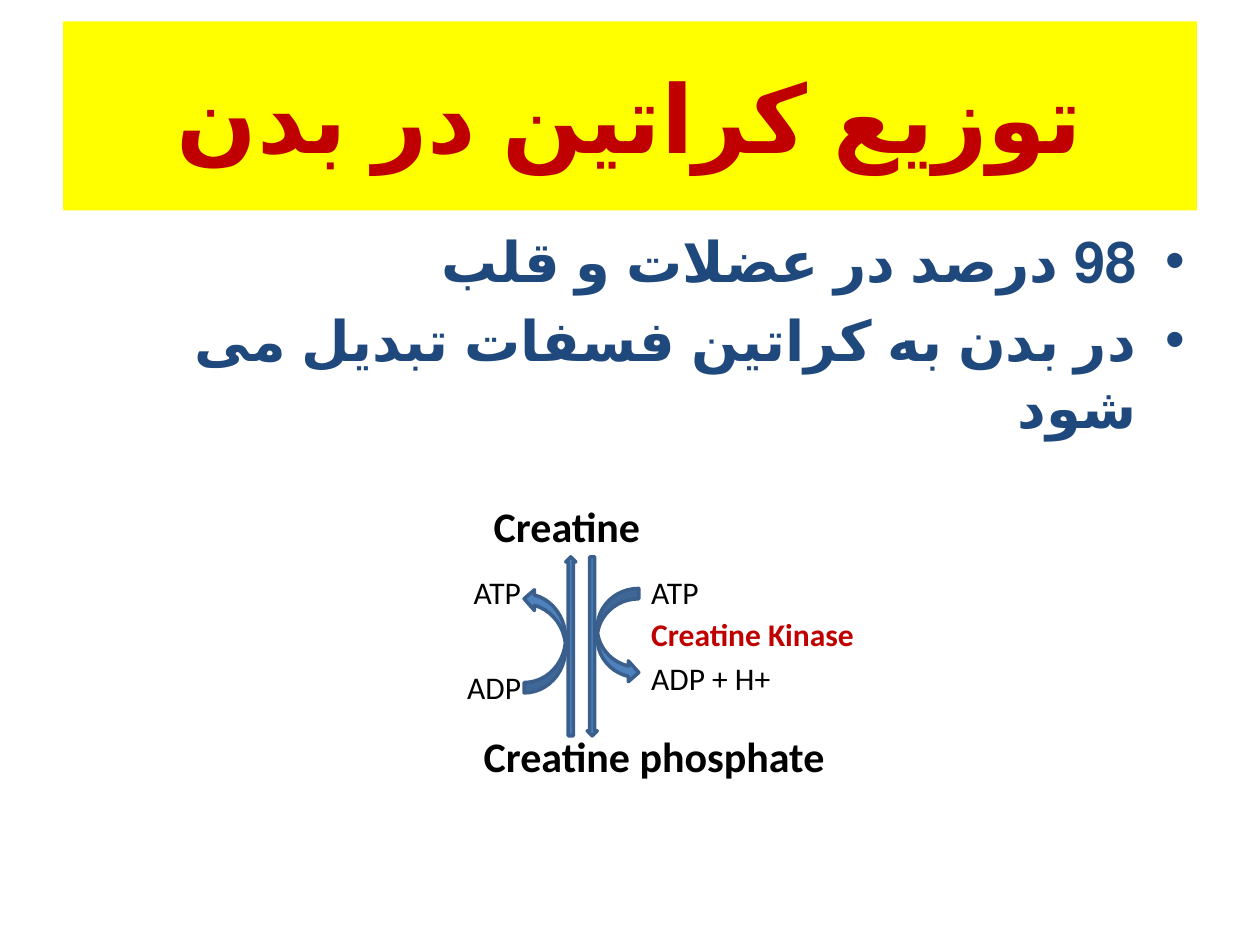
from lxml import etree
from pptx import Presentation
from pptx.dml.color import RGBColor
from pptx.enum.lang import MSO_LANGUAGE_ID as LANG
from pptx.enum.shapes import MSO_SHAPE as SHAPE
from pptx.enum.text import MSO_ANCHOR as ANCHOR, MSO_AUTO_SIZE as AUTO, PP_ALIGN as ALIGN
from pptx.oxml.ns import qn
from pptx.util import Inches, Pt

RED, YELLOW, NAVY, BLACK = "C00000", "FFFF00", "1F497D", "000000"
BLUE, EDGE = "4F81BD", "3A5F8C"


def rgb(value):
    return RGBColor.from_string(value)


def place(sp, box):
    sp.left, sp.top, sp.width, sp.height = (Inches(v) for v in box)


class SlideBuilder:
    font = "Calibri"

    def __init__(self, prs):
        self.s = prs.slides.add_slide(prs.slide_layouts[5])
        self.group = self.s.shapes.add_group_shape()

    def run(self, p, text, size, color, bold=False, farsi=False):
        r = p.add_run()
        r.text = text
        f = r.font
        f.name, f.size, f.bold = self.font, Pt(size), bold
        f.color.rgb = rgb(color)
        if farsi:
            f.language_id = LANG.FARSI

    def title(self, text, box):
        sp = self.s.shapes.title
        place(sp, box)
        sp.fill.solid()
        sp.fill.fore_color.rgb = rgb(YELLOW)
        tf = sp.text_frame
        tf.vertical_anchor = ANCHOR.MIDDLE
        p = tf.paragraphs[0]
        p.alignment = ALIGN.CENTER
        p._p.get_or_add_pPr().set("rtl", "1")
        self.run(p, text, 54, RED, True, True)

    def bullets(self, lines, box):
        tf = self.s.shapes.add_textbox(*(Inches(v) for v in box)).text_frame
        tf.word_wrap = True
        for i, line in enumerate(lines):
            p = tf.add_paragraph() if i else tf.paragraphs[0]
            p.alignment = ALIGN.RIGHT
            p.space_before = Pt(6.4)
            # Right-to-left hanging bullet
            pPr = p._p.get_or_add_pPr()
            pPr.set("rtl", "1")
            pPr.set("marL", str(Inches(0.38)))
            pPr.set("indent", str(Inches(-0.38)))
            etree.SubElement(pPr, qn("a:buFont")).set("typeface", "Arial")
            etree.SubElement(pPr, qn("a:buChar")).set("char", "•")
            self.run(p, line, 32, NAVY, True, True)

    def label(self, text, box, size=18, color=BLACK, bold=False):
        tf = self.group.shapes.add_textbox(*(Inches(v) for v in box)).text_frame
        tf.word_wrap = False
        tf.auto_size = AUTO.SHAPE_TO_FIT_TEXT
        self.run(tf.paragraphs[0], text, size, color, bold)

    def arrow(self, kind, box, flips=()):
        sp = self.group.shapes.add_shape(kind, *(Inches(v) for v in box))
        sp.shadow.inherit = False
        sp.fill.solid()
        sp.fill.fore_color.rgb = rgb(BLUE)
        sp.line.color.rgb = rgb(EDGE)
        sp.line.width = Pt(2)
        for flip in flips:
            sp._element.spPr.find(qn("a:xfrm")).set(flip, "1")


def main():
    prs = Presentation()
    prs.slide_width, prs.slide_height = Inches(10), Inches(7.5)
    b = SlideBuilder(prs)

    # Title and bullets
    b.title("توزیع کراتین در بدن", (0.5, 0.17, 9, 1.5))
    b.bullets(["98 درصد در عضلات و قلب",
               "در بدن به کراتین فسفات تبدیل می شود"], (0.5, 1.75, 9, 4.95))

    # Substrate and product
    b.label("Creatine", (3.82, 3.92, 1.45, 0.5), 24, bold=True)
    b.label("Creatine phosphate", (3.74, 5.75, 3.01, 0.5), 24, bold=True)

    # Forward and reverse reaction arrows
    b.arrow(SHAPE.DOWN_ARROW, (4.66, 4.42, 0.08, 1.42))
    b.arrow(SHAPE.CURVED_RIGHT_ARROW, (4.74, 4.67, 0.33, 0.75))
    b.arrow(SHAPE.DOWN_ARROW, (4.49, 4.42, 0.08, 1.42), ("flipH", "flipV"))
    b.arrow(SHAPE.CURVED_LEFT_ARROW, (4.16, 4.67, 0.33, 0.83), ("flipV",))

    # Cofactors and enzyme
    b.label("ATP", (5.07, 4.5, 0.58, 0.4))
    b.label("ADP + H+", (5.07, 5.18, 1.16, 0.4))
    b.label("ATP", (3.66, 4.5, 0.58, 0.4))
    b.label("ADP", (3.61, 5.25, 0.63, 0.4))
    b.label("Creatine Kinase", (5.07, 4.83, 1.82, 0.4), color=RED, bold=True)

    prs.save("out.pptx")


if __name__ == "__main__":
    main()
